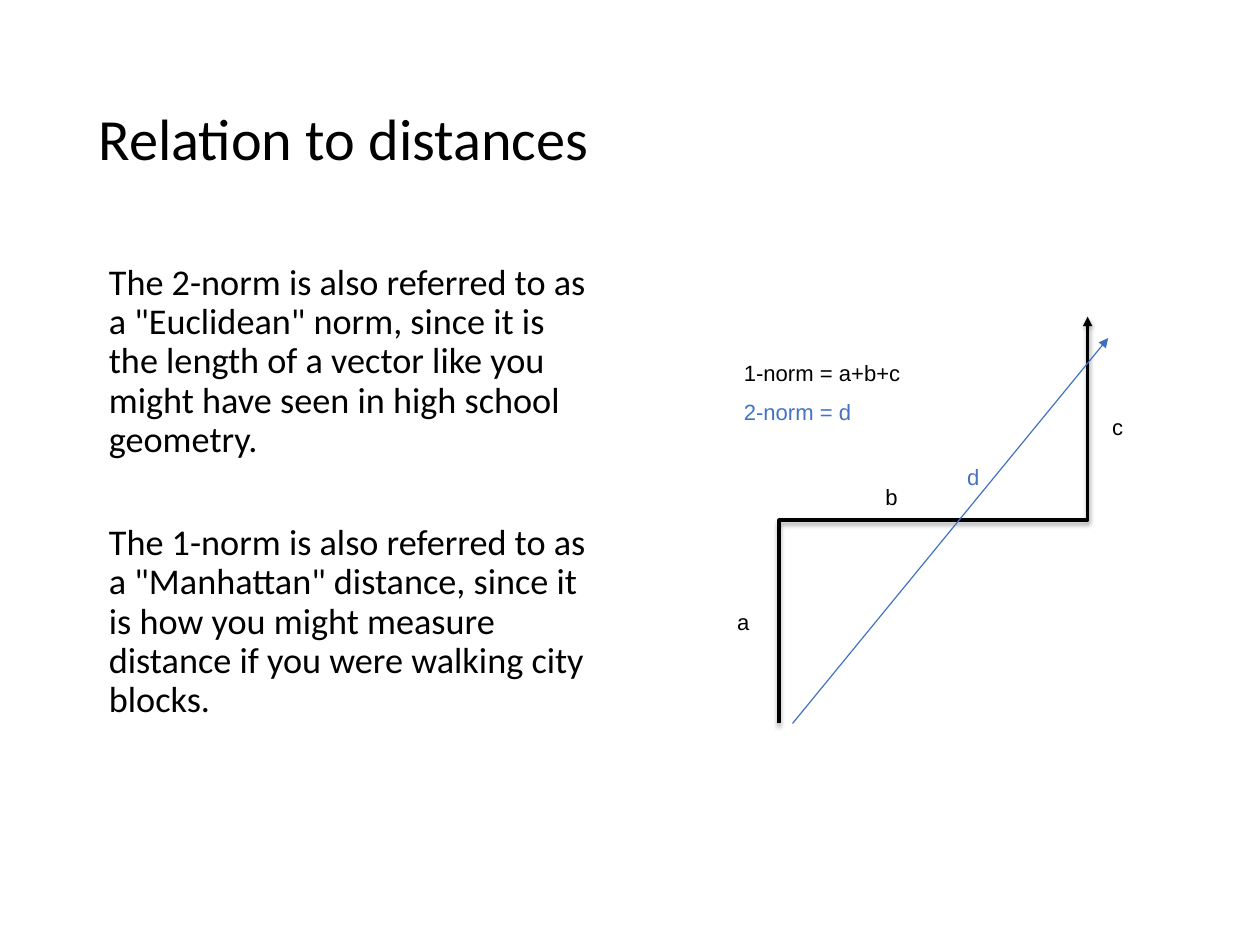
from dataclasses import dataclass

from lxml import etree
from pptx import Presentation
from pptx.dml.color import RGBColor
from pptx.enum import shapes, text
from pptx.oxml import ns
from pptx.util import Cm, Pt


@dataclass(frozen=True)
class Theme:
    black: RGBColor = RGBColor(0x00, 0x00, 0x00)
    blue: RGBColor = RGBColor(0x44, 0x72, 0xC4)
    line_blue: RGBColor = RGBColor(0x3F, 0x6F, 0xC3)
    heading_font: str = "Calibri"
    label_font: str = "Arial"
    title_size: float = 37
    body_size: float = 23
    label_size: float = 14
    inset: float = 0.28


THEME = Theme()


@dataclass(frozen=True)
class Label:
    text: str
    left: float
    top: float
    width: float
    color: RGBColor = THEME.black


BODY = [
    'The 2-norm is also referred to as a "Euclidean" norm, since it is the length '
    "of a vector like you might have seen in high school geometry.",
    'The 1-norm is also referred to as a "Manhattan" distance, since it is how you '
    "might measure distance if you were walking city blocks.",
]

LABELS = [
    Label("2-norm = d", 16.41, 8.79, 2.92, THEME.blue),
    Label("a", 16.26, 13.49, 0.79),
    Label("b", 19.58, 10.69, 0.79),
    Label("c", 24.66, 9.14, 0.76),
    Label("1-norm = a+b+c", 16.41, 7.92, 4.04),
    Label("d", 21.41, 10.26, 0.79, THEME.blue),
]
LABEL_HEIGHT = 0.86

PATH_START, PATH_END = (17.45, 16.2), (24.36, 7.09)
DIRECT_START, DIRECT_END = (17.75, 16.2), (24.82, 7.57)


def write(p, content: str, *, font: str, size: float, color: RGBColor,
          line_spacing: float = 1.0, before: float = 0, indent: float = 0) -> None:
    if indent:
        p._p.get_or_add_pPr().set("marL", str(Cm(indent)))
    p.alignment = text.PP_ALIGN.LEFT
    p.line_spacing = line_spacing
    p.space_before = Pt(before)
    r = p.add_run()
    r.text = content
    r.font.name, r.font.size = font, Pt(size)
    r.font.color.rgb = color


def set_insets(tf) -> None:
    tf.margin_left = tf.margin_right = tf.margin_top = tf.margin_bottom = Cm(THEME.inset)


def add_title(slide) -> None:
    sp = slide.shapes.title
    sp.left, sp.top, sp.width, sp.height = Cm(1.93), Cm(1.12), Cm(24.33), Cm(4.09)
    tf = sp.text_frame
    tf.vertical_anchor = text.MSO_ANCHOR.MIDDLE
    set_insets(tf)
    write(tf.paragraphs[0], "Relation to distances", font=THEME.heading_font,
          size=THEME.title_size, color=THEME.black, line_spacing=0.9)


def add_body(slide) -> None:
    sp = slide.shapes.add_textbox(Cm(1.93), Cm(5.64), Cm(11.73), Cm(13.36))
    tf = sp.text_frame
    tf.word_wrap = True
    set_insets(tf)
    for i, content in enumerate(BODY):
        p = tf.add_paragraph() if i else tf.paragraphs[0]
        write(p, content, font=THEME.heading_font, size=THEME.body_size, color=THEME.black,
              line_spacing=0.9, before=41 if i else 0, indent=0.23)


def add_label(slide, label: Label) -> None:
    sp = slide.shapes.add_textbox(Cm(label.left), Cm(label.top), Cm(label.width),
                                  Cm(LABEL_HEIGHT))
    tf = sp.text_frame
    tf.word_wrap = False
    tf.auto_size = text.MSO_AUTO_SIZE.SHAPE_TO_FIT_TEXT
    write(tf.paragraphs[0], label.text, font=THEME.label_font, size=THEME.label_size,
          color=label.color)


def add_arrow(slide, kind: shapes.MSO_CONNECTOR, start: tuple[float, float],
              end: tuple[float, float], color: RGBColor, width: float):
    """Draw a connector with an arrowhead; return it with its empty effect list."""
    c = slide.shapes.add_connector(kind, *map(Cm, start + end))
    c.line.color.rgb = color
    c.line.width = Pt(width)
    etree.SubElement(c.line._get_or_add_ln(), ns.qn("a:tailEnd"), type="triangle")
    effects = etree.SubElement(c._element.spPr, ns.qn("a:effectLst"))
    return c, effects


def add_city_path(slide) -> None:
    """Draw the up-right-up path as an elbow connector turned by 90 degrees."""
    (x1, y1), (x2, y2) = PATH_START, PATH_END
    mid_x, mid_y = (x1 + x2) / 2, (y1 + y2) / 2
    half_run, half_rise = (x2 - x1) / 2, (y1 - y2) / 2
    c, effects = add_arrow(slide, shapes.MSO_CONNECTOR.ELBOW,
                           (mid_x + half_rise, mid_y + half_run),
                           (mid_x - half_rise, mid_y - half_run), THEME.black, 2)
    c._element.spPr.xfrm.set("rot", str(90 * 60000))
    shadow = etree.SubElement(effects, ns.qn("a:outerShdw"), blurRad=str(Pt(3.1)),
                              dist=str(Pt(1.6)), dir=str(90 * 60000), rotWithShape="0")
    shade = etree.SubElement(shadow, ns.qn("a:srgbClr"), val=str(THEME.black))
    etree.SubElement(shade, ns.qn("a:alpha"), val="38000")


def main() -> None:
    prs = Presentation()
    prs.slide_width, prs.slide_height = Cm(28.22), Cm(21.16)
    slide = prs.slides.add_slide(prs.slide_layouts.get_by_name("Title Only"))
    add_title(slide)
    add_body(slide)
    add_city_path(slide)
    add_arrow(slide, shapes.MSO_CONNECTOR.STRAIGHT, DIRECT_START, DIRECT_END,
              THEME.line_blue, 0.75)
    for label in LABELS:
        add_label(slide, label)
    prs.save("out.pptx")


if __name__ == "__main__":
    main()
